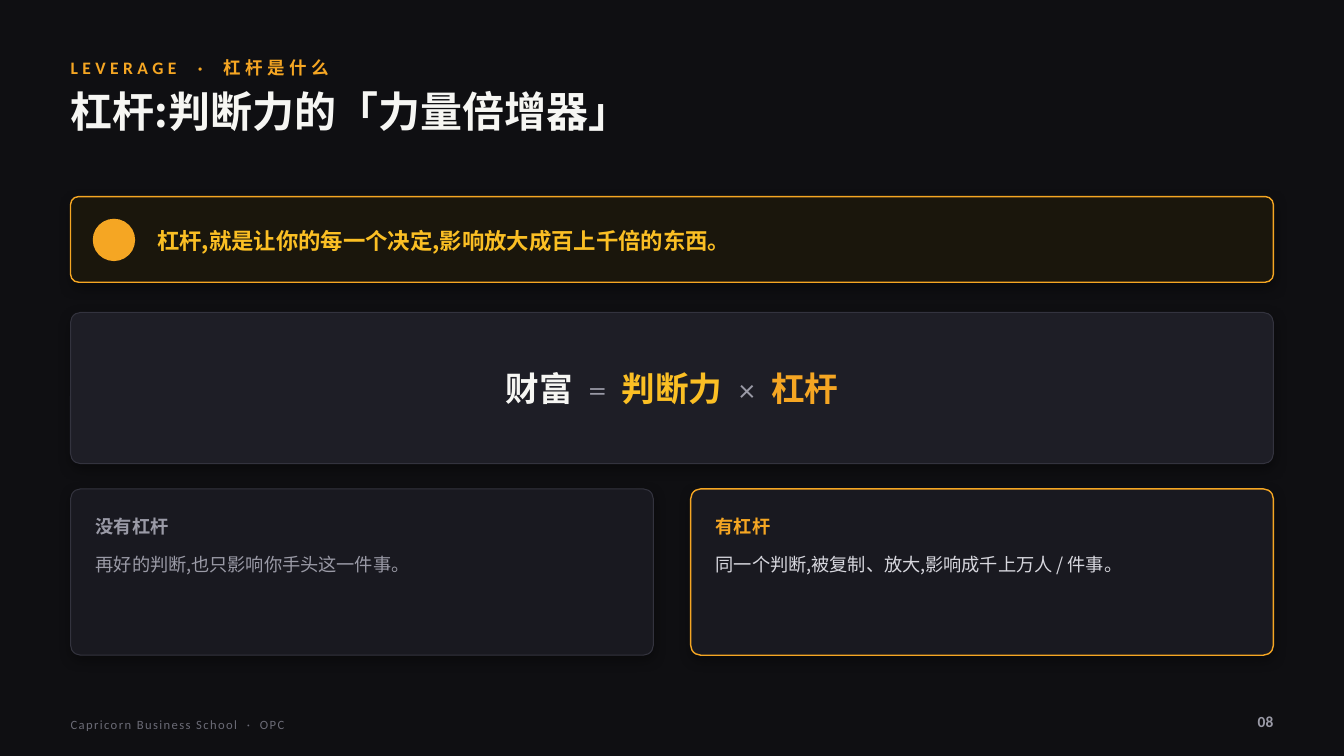
from lxml.etree import SubElement
from pptx import Presentation
from pptx.dml.color import RGBColor
from pptx.enum.shapes import MSO_SHAPE as Shape
from pptx.enum.text import MSO_ANCHOR as Anchor, MSO_AUTO_SIZE as AutoSize, PP_ALIGN as Align
from pptx.oxml.ns import qn
from pptx.util import Inches, Pt

COLORS = {
    "background": "0F0F12",
    "amber": "F5A623",
    "gold": "FBBF24",
    "white": "F6F6F3",
    "light": "D7D7DE",
    "muted": "9A9AA6",
    "faint": "6B6B76",
    "border": "33333E",
    "claim": "1A160C",
    "formula": "1E1E26",
    "card": "191920",
    "shadow": "000000",
}
CJK, LATIN, MATH = "Noto Sans CJK SC", "Calibri", "Cambria"
LEFT, WIDTH = 0.7, 11.93


def rgb(name):
    return RGBColor.from_string(COLORS[name])


class DarkSlide:
    def __init__(self, presentation):
        self.slide = presentation.slides.add_slide(presentation.slide_layouts[5])
        self.slide.background.fill.solid()
        self.slide.background.fill.fore_color.rgb = rgb("background")

    def style_run(self, run, size, color, font=CJK, bold=False, spacing=0):
        run.font.size = Pt(size)
        run.font.bold = bold
        run.font.name = font
        run.font.color.rgb = rgb(color)
        properties = run._r.get_or_add_rPr()
        SubElement(properties, qn("a:ea"), typeface=CJK)
        if spacing:
            properties.set("spc", str(round(spacing * 100)))

    def prepare_frame(self, frame, anchor, align):
        frame.word_wrap = True
        frame.auto_size = AutoSize.NONE
        frame.vertical_anchor = anchor
        frame.margin_left = frame.margin_right = frame.margin_top = frame.margin_bottom = 0
        frame.paragraphs[0].alignment = align
        return frame.paragraphs[0]

    def add_title(self, text, left, top, width, height):
        title = self.slide.shapes.title
        title.left, title.top = Inches(left), Inches(top)
        title.width, title.height = Inches(width), Inches(height)
        title.text_frame.text = text
        paragraph = self.prepare_frame(title.text_frame, Anchor.TOP, Align.LEFT)
        self.style_run(paragraph.runs[0], 30, "white", bold=True)

    def add_text(self, parts, left, top, width, height, size, anchor=Anchor.MIDDLE,
                 align=Align.LEFT, line_spacing=None, spacing=0):
        box = self.slide.shapes.add_textbox(
            Inches(left), Inches(top), Inches(width), Inches(height))
        paragraph = self.prepare_frame(box.text_frame, anchor, align)
        if line_spacing:
            paragraph.line_spacing = line_spacing
        for text, color, font, bold in parts:
            run = paragraph.add_run()
            run.text = text
            self.style_run(run, size, color, font, bold, spacing)

    def add_panel(self, left, top, width, height, fill, line, line_width, radius=0.1):
        panel = self.slide.shapes.add_shape(
            Shape.ROUNDED_RECTANGLE, Inches(left), Inches(top), Inches(width), Inches(height))
        panel.adjustments[0] = radius / height
        panel.fill.solid()
        panel.fill.fore_color.rgb = rgb(fill)
        panel.line.color.rgb = rgb(line)
        panel.line.width = Pt(line_width)
        panel.shadow.inherit = False
        effects = panel._element.spPr.find(qn("a:effectLst"))
        shadow = SubElement(effects, qn("a:outerShdw"), blurRad=str(Pt(9)), dist=str(Pt(3)),
                            dir="5400000", algn="bl", rotWithShape="0")
        shade = SubElement(shadow, qn("a:srgbClr"), val=COLORS["shadow"])
        SubElement(shade, qn("a:alpha"), val="34000")

    def add_dot(self, left, top, diameter, color):
        dot = self.slide.shapes.add_shape(
            Shape.OVAL, Inches(left), Inches(top), Inches(diameter), Inches(diameter))
        dot.fill.solid()
        dot.fill.fore_color.rgb = rgb(color)
        dot.line.fill.background()
        dot.shadow.inherit = False

    def add_card(self, left, heading, heading_color, body, body_color, line, line_width):
        self.add_panel(left, 4.85, 5.78, 1.65, "card", line, line_width)
        self.add_text([(heading, heading_color, CJK, True)], left + 0.25, 5.05, 5, 0.35, 13)
        self.add_text([(body, body_color, CJK, False)], left + 0.25, 5.45, 5.3, 0.9, 13,
                      anchor=Anchor.TOP, line_spacing=1.2)


def main():
    presentation = Presentation()
    presentation.slide_width, presentation.slide_height = Inches(13.33), Inches(7.5)
    leverage = DarkSlide(presentation)

    leverage.add_text([("LEVERAGE  ·  杠杆是什么", "amber", LATIN, True)],
                      LEFT, 0.52, WIDTH, 0.3, 12.5, spacing=3.2)
    leverage.add_title("杠杆:判断力的「力量倍增器」", LEFT, 0.85, WIDTH, 0.9)

    leverage.add_panel(LEFT, 1.95, WIDTH, 0.85, "claim", "amber", 1, radius=0.08)
    leverage.add_dot(0.92, 2.17, 0.42, "amber")
    leverage.add_text([("杠杆,就是让你的每一个决定,影响放大成百上千倍的东西。", "gold", CJK, True)],
                      1.56, 1.95, 10.83, 0.85, 16, line_spacing=1.05)

    leverage.add_panel(LEFT, 3.1, WIDTH, 1.5, "formula", "border", 0.75)
    formula = [
        ("财富  ", "white", CJK, True),
        ("=  ", "muted", MATH, False),
        ("判断力  ", "gold", CJK, True),
        ("×  ", "muted", MATH, False),
        ("杠杆", "amber", CJK, True),
    ]
    leverage.add_text(formula, LEFT, 3.1, WIDTH, 1.5, 24, align=Align.CENTER)

    leverage.add_card(LEFT, "没有杠杆", "muted",
                      "再好的判断,也只影响你手头这一件事。", "muted", "border", 0.75)
    leverage.add_card(6.85, "有杠杆", "amber",
                      "同一个判断,被复制、放大,影响成千上万人 / 件事。", "light", "amber", 1)

    leverage.add_text([("Capricorn Business School  ·  OPC", "faint", LATIN, False)],
                      LEFT, 7.04, 7, 0.3, 9, spacing=1)
    leverage.add_text([("08", "muted", LATIN, True)], 11.83, 7, 0.8, 0.32, 11, align=Align.RIGHT)
    presentation.save("out.pptx")


if __name__ == "__main__":
    main()
